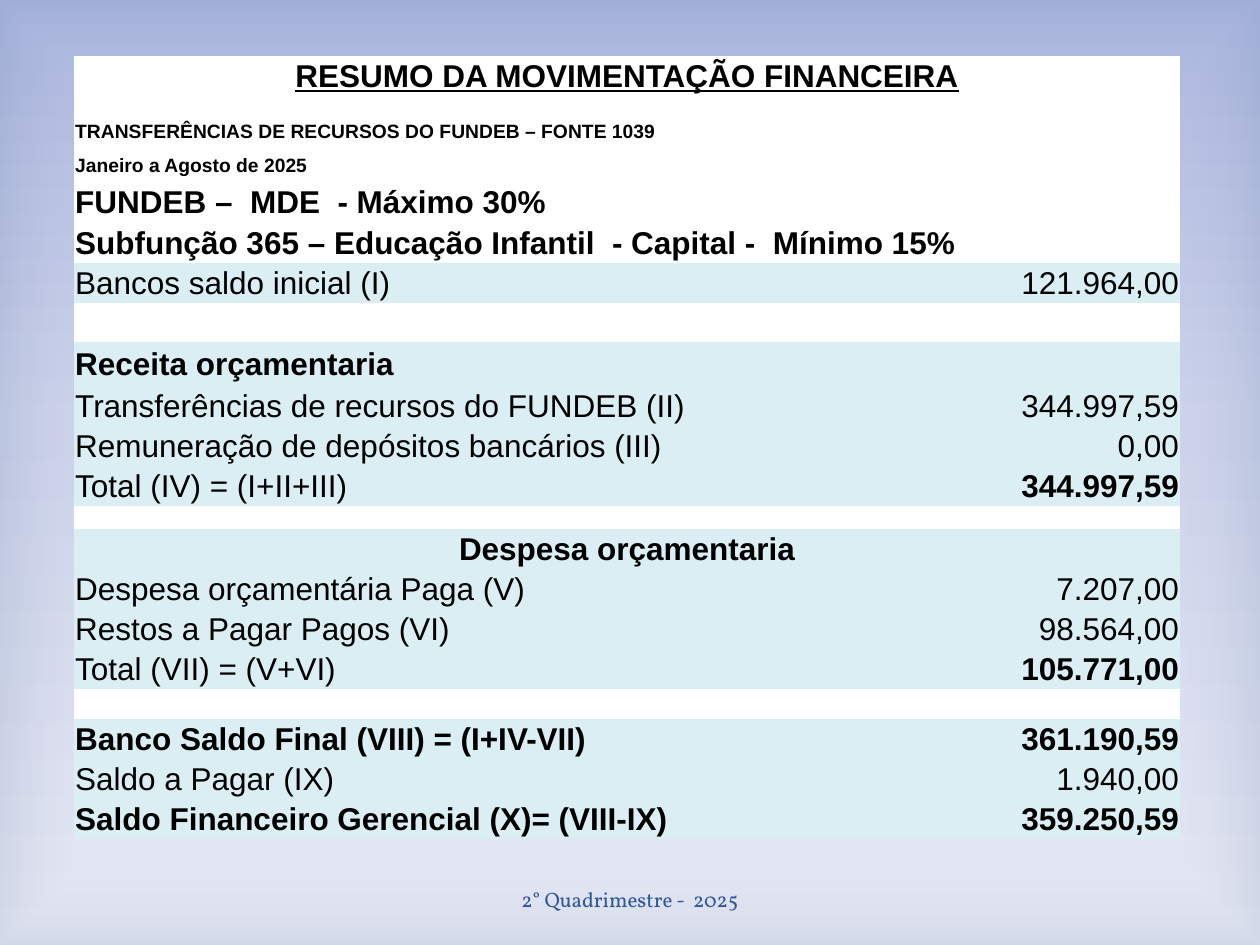
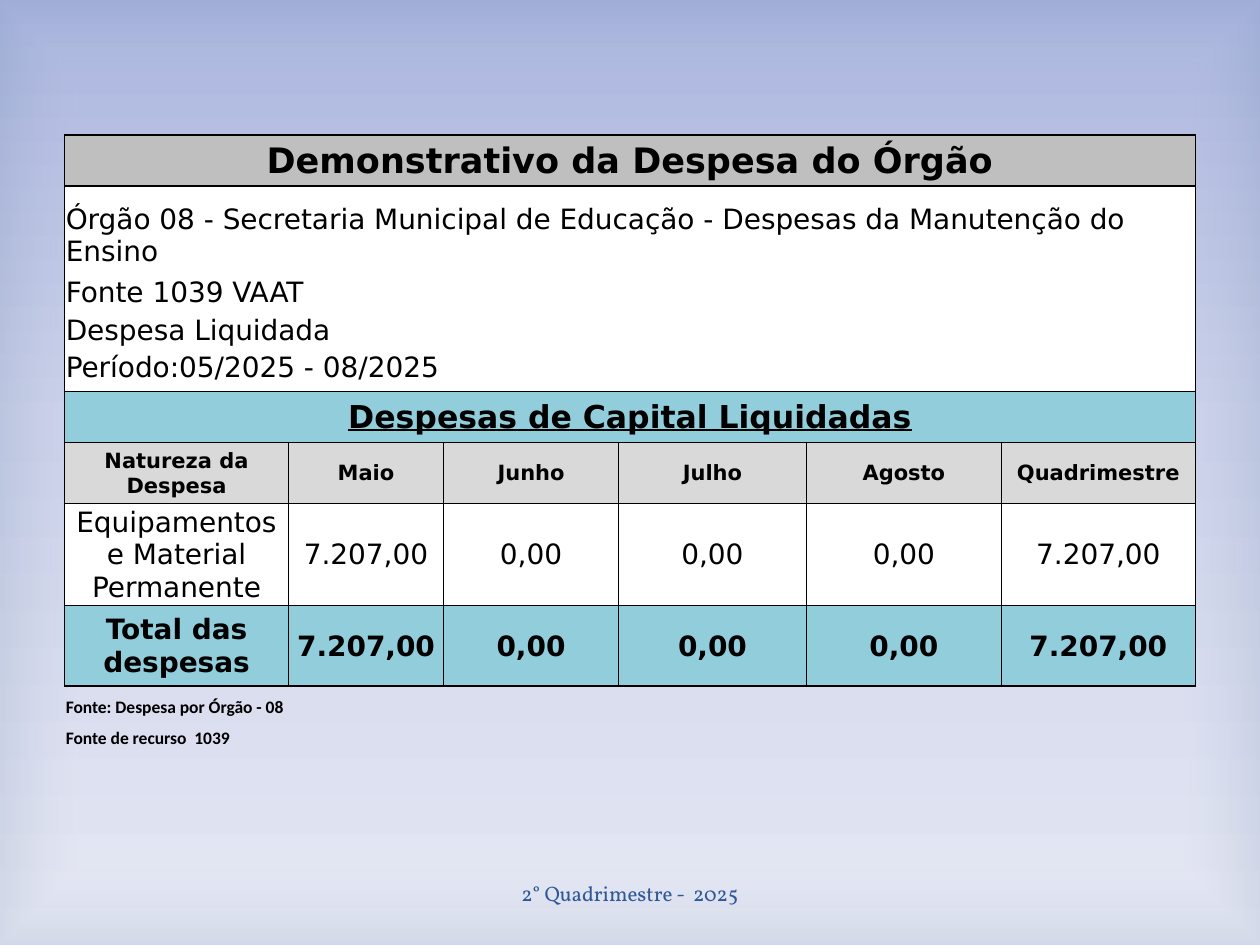
from lxml.etree import SubElement
from pptx import Presentation
from pptx.dml.color import RGBColor
from pptx.enum.shapes import MSO_SHAPE
from pptx.enum.text import MSO_ANCHOR, PP_ALIGN
from pptx.oxml import parse_xml
from pptx.oxml.ns import nsdecls, qn
from pptx.util import Pt

# Shared look
WIDTH, HEIGHT = 720, 540
BLACK, WHITE, NAVY = "000000", "FFFFFF", "2F5897"
PALE_BLUE, BLUE, GREY, LIGHT_GREY = "DAEEF3", "92CDDC", "BFBFBF", "D9D9D9"
BACKGROUND_STOPS = [(0, "A2AEDC", 100), (45, "C6CDE8", 100), (100, "E3E6F3", 100)]
VIGNETTE_STOPS = [(83, "FFFFFF", 11), (100, "9BADC4", 23)]
DOWNWARD = '<a:lin ang="5400000" scaled="0"/>'
FROM_CENTRE = ('<a:path path="rect"><a:fillToRect l="50000" t="50000" '
               'r="50000" b="50000"/></a:path>')
NO_STYLE = "{2D5ABB26-0587-4C30-8999-92F81FD0307C}"
FOOTER = "2° Quadrimestre -  2025"
LEFT, CENTER, RIGHT = PP_ALIGN.LEFT, PP_ALIGN.CENTER, PP_ALIGN.RIGHT
SIDES = (PP_ALIGN.JUSTIFY, RIGHT)

# Row styles; a tuple gives one value per column, "lines" is top, bottom, outer, inner
DEFAULT = {"font": "Arial", "size": 18, "bold": True, "underline": False,
           "align": LEFT, "anchor": MSO_ANCHOR.MIDDLE, "fill": WHITE,
           "lines": (0, 0, 0, 0)}
SUMMARY_STYLES = {
    "title": {"align": CENTER, "underline": True},
    "note": {"size": 11},
    "heading": {},
    "gap": {},
    "section": {"fill": PALE_BLUE},
    "centred section": {"fill": PALE_BLUE, "align": CENTER},
    "item": {"fill": PALE_BLUE, "align": SIDES, "bold": False},
    "total": {"fill": PALE_BLUE, "align": SIDES, "bold": (False, True)},
    "balance": {"fill": PALE_BLUE, "align": SIDES},
}
SANS = {"font": "DejaVu Sans", "size": 16}
BODY = SANS | {"bold": False}
EXPENSE_STYLES = {
    "title": SANS | {"size": 20, "align": CENTER, "fill": GREY, "lines": (1, 1, 1, 0)},
    "first": BODY | {"anchor": MSO_ANCHOR.BOTTOM, "lines": (1, 0, 1, 0)},
    "source": BODY | {"anchor": MSO_ANCHOR.BOTTOM, "lines": (0, 0, 1, 0)},
    "stage": BODY | {"lines": (0, 0, 1, 0)},
    "period": BODY | {"anchor": MSO_ANCHOR.TOP, "lines": (0, 1, 1, 0)},
    "section": SANS | {"size": 18, "underline": True, "align": CENTER, "fill": BLUE,
                       "lines": (1, 1, 1, 0)},
    "header": SANS | {"size": 12, "align": CENTER, "fill": LIGHT_GREY,
                      "lines": (1, 0.5, 1, 0.5)},
    "item": BODY | {"align": CENTER, "lines": (0.5, 1, 1, 0.5)},
    "total": SANS | {"align": CENTER, "fill": BLUE, "lines": (1, 1, 1, 1)},
    "first note": {"font": "Calibri", "size": 10, "anchor": MSO_ANCHOR.BOTTOM,
                   "fill": None, "lines": (1, 0, 0, 0)},
    "note": {"font": "Calibri", "size": 10, "anchor": MSO_ANCHOR.BOTTOM, "fill": None},
}

# Rows: height, style, texts (a single text spans the whole row)
SUMMARY_ROWS = [
    (23, "title", ["RESUMO DA MOVIMENTAÇÃO FINANCEIRA"]),
    (10.1, "gap", [""]),
    (19.4, "note", ["TRANSFERÊNCIAS DE RECURSOS DO FUNDEB – FONTE 1039"]),
    (19.4, "note", ["Janeiro a Agosto de 2025"]),
    (23, "heading", ["FUNDEB –  MDE  - Máximo 30%", ""]),
    (23.6, "heading", ["Subfunção 365 – Educação Infantil  - Capital -  Mínimo 15%"]),
    (22.9, "item", ["Bancos saldo inicial (I)", "121.964,00"]),
    (22.3, "gap", [""]),
    (25, "section", ["Receita orçamentaria"]),
    (22.9, "item", ["Transferências de recursos do FUNDEB (II)", "344.997,59"]),
    (22.9, "item", ["Remuneração de depósitos bancários (III)", "0,00"]),
    (22.9, "total", ["Total (IV) = (I+II+III)", "344.997,59"]),
    (13.1, "gap", [""]),
    (22.9, "centred section", ["Despesa orçamentaria"]),
    (22.9, "item", ["Despesa orçamentária Paga (V)", "7.207,00"]),
    (22.9, "item", ["Restos a Pagar Pagos (VI)", "98.564,00"]),
    (22.9, "total", ["Total (VII) = (V+VI)", "105.771,00"]),
    (16.9, "gap", [""]),
    (22.9, "balance", ["Banco Saldo Final (VIII) = (I+IV-VII)", "361.190,59"]),
    (22.9, "item", ["Saldo a Pagar (IX)", "1.940,00"]),
    (22.9, "balance", ["Saldo Financeiro Gerencial (X)= (VIII-IX)", "359.250,59"]),
]
AMOUNTS = ["7.207,00", "0,00", "0,00", "0,00", "7.207,00"]
EXPENSE_ROWS = [
    (29.3, "title", ["Demonstrativo da Despesa do Órgão"]),
    (46.8, "first", ["Órgão 08 - Secretaria Municipal de Educação - "
                     "Despesas da Manutenção do Ensino"]),
    (23.5, "source", ["Fonte 1039 VAAT"]),
    (23.5, "stage", ["Despesa Liquidada"]),
    (23.5, "period", ["Período:05/2025 - 08/2025"]),
    (29.2, "section", ["Despesas de Capital Liquidadas"]),
    (34.8, "header", ["Natureza da Despesa", "Maio", "Junho", "Julho", "Agosto",
                      "Quadrimestre"]),
    (56.4, "item", ["Equipamentos e Material Permanente"] + AMOUNTS),
    (46.2, "total", ["Total das despesas"] + AMOUNTS),
    (18, "first note", ["Fonte: Despesa por Órgão - 08"] + [""] * 5),
    (18, "note", ["Fonte de recurso  1039"] + [""] * 5),
]
SLIDES = [
    {"footer_top": 499, "left": 42.3, "top": 32, "widths": [487.4, 144.7],
     "rows": SUMMARY_ROWS, "styles": SUMMARY_STYLES},
    {"footer_top": 496, "left": 36.9, "top": 77.1,
     "widths": [128, 88.6, 100, 107.4, 111.4, 110.9],
     "rows": EXPENSE_ROWS, "styles": EXPENSE_STYLES},
]


def color(value):
    return RGBColor.from_string(value)


def set_all(target, values):
    for name, value in values.items():
        setattr(target, name, value)


def replace_with_gradient(solid_fill, stops, direction):
    stop_xml = "".join(
        f'<a:gs pos="{position * 1000}"><a:srgbClr val="{value}">'
        f'<a:alpha val="{opacity * 1000}"/></a:srgbClr></a:gs>'
        for position, value, opacity in stops)
    gradient = parse_xml(f'<a:gradFill {nsdecls("a")} rotWithShape="1">'
                         f'<a:gsLst>{stop_xml}</a:gsLst>{direction}</a:gradFill>')
    solid_fill.getparent().replace(solid_fill, gradient)


def write(paragraph, text, style):
    paragraph.alignment = style["align"]
    run = paragraph.add_run()
    run.text = text
    set_all(run.font, {"name": style["font"], "size": Pt(style["size"]),
                       "bold": style["bold"], "underline": style["underline"]})
    run.font.color.rgb = color(style["color"])


def add_vignette(slide):
    shape = slide.shapes.add_shape(MSO_SHAPE.RECTANGLE, 0, 0, Pt(WIDTH), Pt(HEIGHT))
    shape.shadow.inherit = False
    shape.line.fill.background()
    shape.fill.solid()
    shape.fill.fore_color.rgb = color(WHITE)
    solid_fill = shape.element.spPr.find(qn("a:solidFill"))
    replace_with_gradient(solid_fill, VIGNETTE_STOPS, FROM_CENTRE)


def add_footer(slide, top):
    box = slide.shapes.add_textbox(Pt(246), Pt(top), Pt(228), Pt(29))
    set_all(box.text_frame, {"word_wrap": True, "vertical_anchor": MSO_ANCHOR.MIDDLE})
    write(box.text_frame.paragraphs[0], FOOTER,
          {"font": "Vollkorn", "size": 12, "bold": False, "underline": False,
           "align": CENTER, "color": NAVY})


def set_borders(cell, widths):
    properties = cell._tc.get_or_add_tcPr()
    for tag, width in zip(("a:lnL", "a:lnR", "a:lnT", "a:lnB"), widths):
        line = SubElement(properties, qn(tag), w=str(Pt(width)))
        if width:
            SubElement(SubElement(line, qn("a:solidFill")), qn("a:srgbClr"), val=BLACK)
        else:
            SubElement(line, qn("a:noFill"))


def format_cell(cell, text, style):
    set_all(cell, {"margin_left": Pt(0.7), "margin_right": Pt(0.7),
                   "margin_top": Pt(0.7), "margin_bottom": 0,
                   "vertical_anchor": style["anchor"]})
    if style["fill"]:
        cell.fill.solid()
        cell.fill.fore_color.rgb = color(style["fill"])
    else:
        cell.fill.background()
    paragraph = cell.text_frame.paragraphs[0]
    if text:
        write(paragraph, text, style)
    else:
        # Small type keeps empty rows at their set height
        SubElement(paragraph._p, qn("a:endParaRPr"), sz="500")


def add_table(slide, left, top, widths, rows, styles):
    frame = slide.shapes.add_table(
        len(rows), len(widths), Pt(left), Pt(top), Pt(sum(widths)),
        Pt(sum(height for height, _, _ in rows)))
    table = frame.table
    set_all(table, {"first_row": False, "horz_banding": False})
    next(frame.element.iter(qn("a:tableStyleId"))).text = NO_STYLE
    for column, width in zip(table.columns, widths):
        column.width = Pt(width)

    last = len(widths) - 1
    for row, (height, style_name, texts) in enumerate(rows):
        table.rows[row].height = Pt(height)
        style = DEFAULT | {"color": BLACK} | styles[style_name]
        above, below, outer, inner = style["lines"]
        spans = len(texts) == 1
        if spans:
            table.cell(row, 0).merge(table.cell(row, last))
        for column in range(last + 1):
            cell = table.cell(row, column)
            at_right = column == last or (spans and column == 0)
            set_borders(cell, (outer if column == 0 else inner,
                               outer if at_right else inner, above, below))
            cell_style = {name: value[column] if isinstance(value, tuple) else value
                          for name, value in style.items() if name != "lines"}
            format_cell(cell, texts[column] if column < len(texts) else "", cell_style)


def main():
    presentation = Presentation()
    set_all(presentation, {"slide_width": Pt(WIDTH), "slide_height": Pt(HEIGHT)})

    # Background shared through the master
    master = presentation.slide_master
    master.background.fill.solid()
    master.background.fill.fore_color.rgb = color(WHITE)
    background = next(master.element.iter(qn("p:bgPr")))
    replace_with_gradient(background.find(qn("a:solidFill")), BACKGROUND_STOPS, DOWNWARD)

    blank_layout = presentation.slide_layouts[6]
    for content in SLIDES:
        slide = presentation.slides.add_slide(blank_layout)
        add_vignette(slide)
        add_footer(slide, content["footer_top"])
        add_table(slide, content["left"], content["top"], content["widths"],
                  content["rows"], content["styles"])
    presentation.save("out.pptx")


if __name__ == "__main__":
    main()
